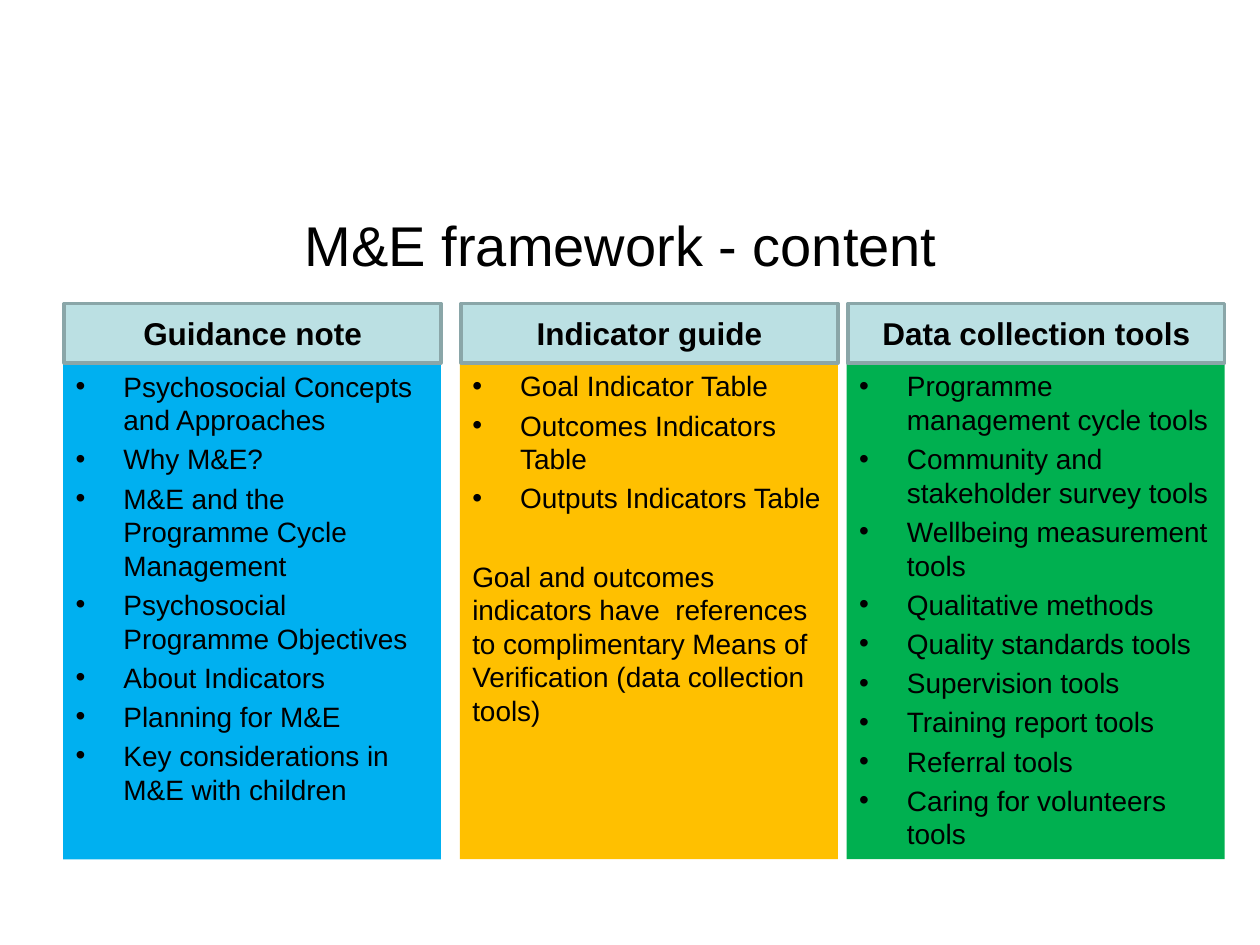
from lxml import etree
from pptx import Presentation
from pptx.dml.color import RGBColor
from pptx.enum.shapes import MSO_SHAPE
from pptx.enum.text import MSO_ANCHOR, MSO_AUTO_SIZE, PP_ALIGN
from pptx.oxml.ns import qn
from pptx.util import Inches, Pt

RECTANGLE = MSO_SHAPE.RECTANGLE
TOP, MIDDLE = MSO_ANCHOR.TOP, MSO_ANCHOR.MIDDLE
LEFT, CENTER = PP_ALIGN.LEFT, PP_ALIGN.CENTER
NO_AUTOFIT = MSO_AUTO_SIZE.NONE

BLACK = RGBColor(0x00, 0x00, 0x00)
BLUE = RGBColor(0x00, 0xB0, 0xF0)
AMBER = RGBColor(0xFF, 0xC0, 0x00)
GREEN = RGBColor(0x00, 0xB0, 0x50)
PALE_TEAL = RGBColor(0xBB, 0xE0, 0xE3)
GREY_TEAL = RGBColor(0x8A, 0xA6, 0xA8)

# Grid: three columns, each a header above a panel
COLUMN_LEFTS = (0.5, 3.65, 6.72)
COLUMN_WIDTH = 3
HEADER_TOP, PANEL_TOP, PANEL_BOTTOM = 2.41, 2.88, 6.82
HEADER_INSET = 0.01
BULLET_INDENT = 0.38
PARAGRAPH_GAP, NOTE_GAP = 3.2, 25.5

# Header, panel colour, bulleted items, closing note
COLUMNS = (
    ("Guidance note", BLUE, (
        "Psychosocial Concepts and Approaches",
        "Why M&E?",
        "M&E and the Programme Cycle Management",
        "Psychosocial Programme Objectives",
        "About Indicators",
        "Planning for M&E",
        "Key considerations in M&E with children"), None),
    ("Indicator guide", AMBER, (
        "Goal Indicator Table",
        "Outcomes Indicators Table",
        "Outputs Indicators Table"),
     "Goal and outcomes indicators have  references to complimentary "
     "Means of Verification (data collection tools)"),
    ("Data collection tools", GREEN, (
        "Programme management cycle tools",
        "Community and stakeholder survey tools",
        "Wellbeing measurement tools",
        "Qualitative methods",
        "Quality standards tools",
        "Supervision tools",
        "Training report tools",
        "Referral tools",
        "Caring for volunteers tools"), None),
)


def place(shape, left, top, width, height):
    shape.left, shape.top = Inches(left), Inches(top)
    shape.width, shape.height = Inches(width), Inches(height)


def set_bullet(paragraph, bulleted):
    properties = paragraph._p.get_or_add_pPr()
    indent = Inches(BULLET_INDENT) if bulleted else 0
    properties.set("marL", str(indent))
    properties.set("indent", str(-indent))
    if bulleted:
        etree.SubElement(properties, qn("a:buFont")).set("typeface", "Arial")
        etree.SubElement(properties, qn("a:buChar")).set("char", "•")
    else:
        etree.SubElement(properties, qn("a:buNone"))


def write(shape, text, size=16, bold=False, align=LEFT, anchor=TOP,
          bulleted=False, first=True, gap=0):
    """Write one paragraph, either the first in the shape or a further one."""
    frame = shape.text_frame
    frame.word_wrap = True
    frame.auto_size = NO_AUTOFIT
    frame.vertical_anchor = anchor
    paragraph = frame.paragraphs[0] if first else frame.add_paragraph()
    set_bullet(paragraph, bulleted)
    paragraph.alignment = align
    paragraph.space_before = Pt(0 if first else gap)
    run = paragraph.add_run()
    run.text = text
    run.font.name = "Arial"
    run.font.size = Pt(size)
    run.font.bold = bold
    run.font.color.rgb = BLACK


def add_rectangle(slide, left, top, width, height):
    shape = slide.shapes.add_shape(RECTANGLE, Inches(left), Inches(top),
                                   Inches(width), Inches(height))
    shape.shadow.inherit = False
    shape.line.fill.background()
    return shape


def add_header(slide, left, text):
    header = add_rectangle(slide, left + HEADER_INSET, HEADER_TOP,
                           COLUMN_WIDTH - HEADER_INSET, PANEL_TOP - HEADER_TOP)
    header.fill.solid()
    header.fill.fore_color.rgb = PALE_TEAL
    header.line.color.rgb = GREY_TEAL
    header.line.width = Pt(2)
    write(header, text, size=18, bold=True, align=CENTER, anchor=MIDDLE)


def fill_panel(panel, color, items, note):
    panel.fill.solid()
    panel.fill.fore_color.rgb = color
    for index, item in enumerate(items):
        write(panel, item, bulleted=True, first=index == 0, gap=PARAGRAPH_GAP)
    if note:
        write(panel, note, first=False, gap=NOTE_GAP)


def main():
    presentation = Presentation()
    presentation.slide_width, presentation.slide_height = Inches(10), Inches(7.5)
    slide = presentation.slides.add_slide(presentation.slide_layouts[1])

    # Title
    title = slide.shapes.title
    place(title, 0.43, 1.31, 9, 1.25)
    write(title, "M&E framework - content", size=32, align=CENTER, anchor=MIDDLE)

    # Panels: the first is the body placeholder
    for index, (left, column) in enumerate(zip(COLUMN_LEFTS, COLUMNS)):
        box = (left, PANEL_TOP, COLUMN_WIDTH, PANEL_BOTTOM - PANEL_TOP)
        if index == 0:
            panel = slide.placeholders[1]
            place(panel, *box)
        else:
            panel = add_rectangle(slide, *box)
        fill_panel(panel, *column[1:])

    # Headers lie over the panels' top edges
    for left, column in zip(COLUMN_LEFTS, COLUMNS):
        add_header(slide, left, column[0])

    presentation.save("out.pptx")


if __name__ == "__main__":
    main()
